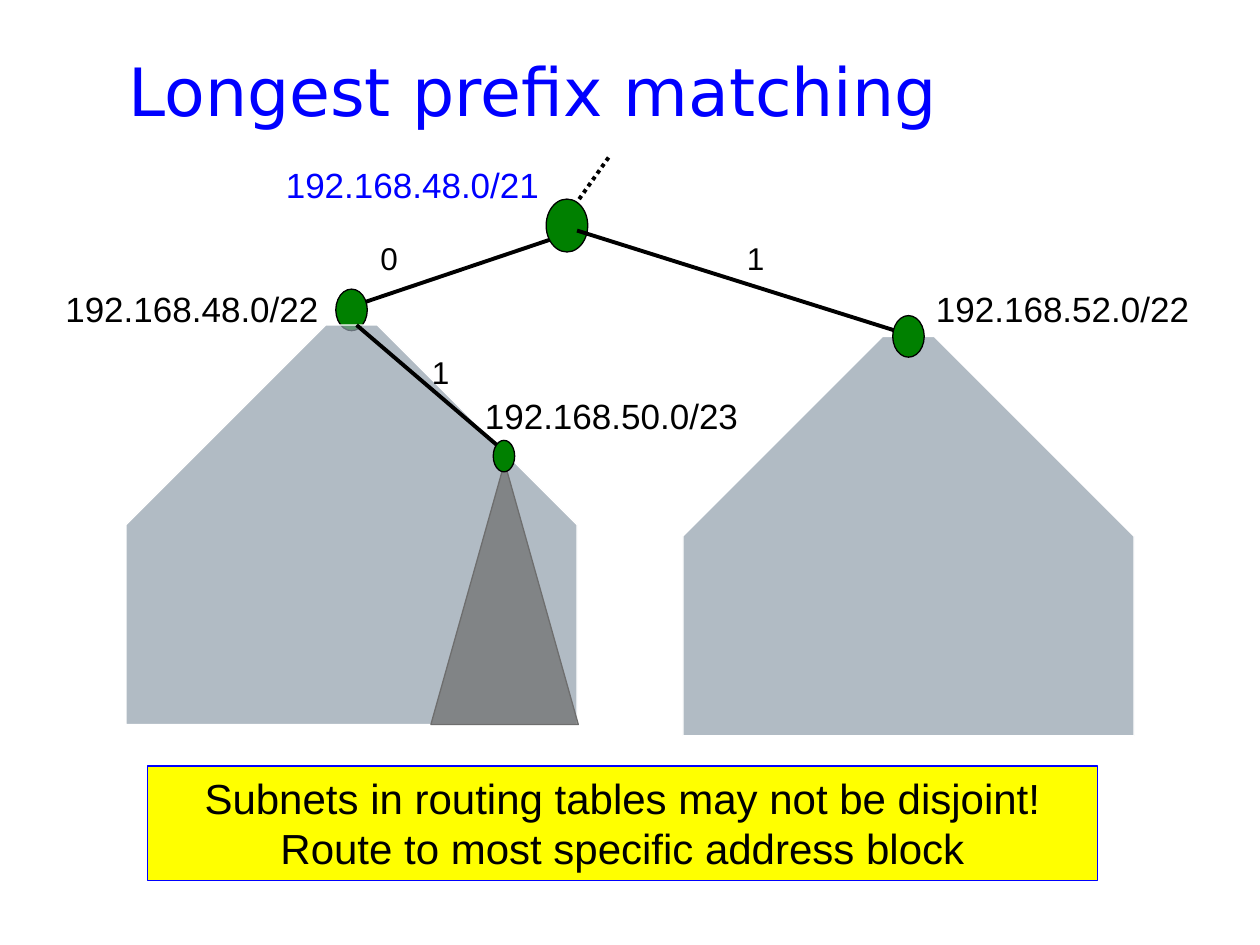
from lxml import etree
from pptx import Presentation
from pptx.dml.color import RGBColor
from pptx.enum.dml import MSO_LINE
from pptx.enum.shapes import MSO_CONNECTOR, MSO_SHAPE as SHAPE
from pptx.enum.text import MSO_ANCHOR as ANCHOR, MSO_AUTO_SIZE as AUTO_SIZE, PP_ALIGN as ALIGN
from pptx.oxml.ns import qn
from pptx.util import Inches, Pt

BLUE = RGBColor(0x00, 0x00, 0xFF)
BLACK = RGBColor(0x00, 0x00, 0x00)
WHITE = RGBColor(0xFF, 0xFF, 0xFF)
GREEN = RGBColor(0x00, 0x80, 0x00)
YELLOW = RGBColor(0xFF, 0xFF, 0x00)
SLATE = RGBColor(0x92, 0xA0, 0xAD)
GRAY = RGBColor(0x6E, 0x6E, 0x6E)


class TreeSlide:
    """Holds the style and the current page of a prefix tree."""

    title_font, text_font = "DejaVu Sans", "Arial"
    edge_width, outline_width = Pt(2.25), Pt(0.75)

    def __init__(self, deck):
        self.page = deck.slides.add_slide(deck.slide_layouts[5])

    def format_text(self, para, text, size, color, name=None):
        span = para.add_run()
        span.text = text
        values = {"name": name or self.text_font, "size": Pt(size)}
        for key, value in values.items():
            setattr(span.font, key, value)
        span.font.color.rgb = color

    def title(self, text, left, top, width, height):
        box = self.page.shapes.title
        place = {"left": left, "top": top, "width": width, "height": height}
        for key, value in place.items():
            setattr(box, key, Inches(value))
        frame = box.text_frame
        frame.auto_size = AUTO_SIZE.NONE
        frame.vertical_anchor = ANCHOR.MIDDLE
        para = frame.paragraphs[0]
        para.alignment = ALIGN.LEFT
        self.format_text(para, text, 38, BLUE, self.title_font)

    def label(self, text, left, top, width=2.23, height=0.44, size=20, color=BLACK):
        box = self.page.shapes.add_textbox(
            Inches(left), Inches(top), Inches(width), Inches(height))
        frame = box.text_frame
        frame.word_wrap = False
        frame.auto_size = AUTO_SIZE.SHAPE_TO_FIT_TEXT
        self.format_text(frame.paragraphs[0], text, size, color)

    def bit(self, text, left, top):
        self.label(text, left, top, 0.34, 0.4, size=18)

    def shape(self, kind, left, top, width, height, fill, line, alpha=None):
        shape = self.page.shapes.add_shape(
            kind, Inches(left), Inches(top), Inches(width), Inches(height))
        shape.shadow.inherit = False
        shape.fill.solid()
        shape.fill.fore_color.rgb = fill
        shape.line.color.rgb = line
        shape.line.width = self.outline_width
        if alpha:
            color = shape.fill._xPr.find(qn("a:solidFill"))[0]
            etree.SubElement(color, qn("a:alpha")).set("val", str(alpha * 1000))
        return shape

    def node(self, center_x, center_y, width, height):
        self.shape(SHAPE.OVAL, center_x - width / 2, center_y - height / 2,
                   width, height, GREEN, BLACK)

    def subtree(self, left, top):
        house = self.shape(SHAPE.SNIP_2_SAME_RECTANGLE, left, top, 3.58, 3.17,
                           SLATE, WHITE, alpha=71)
        house.adjustments[0] = 0.5
        house.adjustments[1] = 0

    def edge(self, start_x, start_y, end_x, end_y, dash=None):
        edge = self.page.shapes.add_connector(
            MSO_CONNECTOR.STRAIGHT, Inches(start_x), Inches(start_y),
            Inches(end_x), Inches(end_y))
        edge.line.color.rgb = BLACK
        edge.line.width = self.edge_width
        if dash:
            edge.line.dash_style = dash
        etree.SubElement(edge._element.spPr, qn("a:effectLst"))

    def banner(self, lines, left, top, width, height):
        box = self.shape(SHAPE.RECTANGLE, left, top, width, height, YELLOW, BLUE)
        frame = box.text_frame
        frame.word_wrap = True
        frame.auto_size = AUTO_SIZE.SHAPE_TO_FIT_TEXT
        frame.vertical_anchor = ANCHOR.TOP
        for index, text in enumerate(lines):
            para = frame.add_paragraph() if index else frame.paragraphs[0]
            para.alignment = ALIGN.CENTER
            self.format_text(para, text, 24, BLACK)


def main():
    deck = Presentation()
    deck.slide_width, deck.slide_height = Inches(10), Inches(7.5)
    tree = TreeSlide(deck)
    tree.title("Longest prefix matching", 0.92, 0.25, 8.83, 0.92)

    # Left branch and its subtree
    tree.edge(4.58, 1.83, 2.83, 2.42)
    tree.bit("0", 2.92, 1.85)
    tree.bit("1", 5.83, 1.85)
    tree.node(2.79, 2.46, 0.25, 0.33)
    tree.subtree(1, 2.58)

    # Root of the block
    tree.edge(4.83, 1.25, 4.42, 1.83, dash=MSO_LINE.ROUND_DOT)
    tree.label("192.168.48.0/21", 2.17, 1.25, color=BLUE)
    tree.node(4.5, 1.79, 0.33, 0.42)
    tree.label("192.168.48.0/22", 0.42, 2.23)
    tree.edge(4.58, 1.83, 7.25, 2.67)

    # More specific block inside the left subtree
    tree.bit("1", 3.33, 2.75)
    tree.edge(2.83, 2.58, 4, 3.58)
    tree.shape(SHAPE.ISOSCELES_TRIANGLE, 3.42, 3.67, 1.17, 2.08, GRAY, GRAY, alpha=71)
    tree.label("192.168.50.0/23", 3.75, 3.08)
    tree.node(4, 3.62, 0.17, 0.25)

    # Right subtree
    tree.subtree(5.42, 2.67)
    tree.node(7.21, 2.67, 0.25, 0.33)
    tree.label("192.168.52.0/22", 7.33, 2.23)

    # Conclusion
    tree.banner(["Subnets in routing tables may not be disjoint!",
                 "Route to most specific address block"], 1.17, 6.08, 7.54, 0.91)

    deck.save("out.pptx")


if __name__ == "__main__":
    main()
